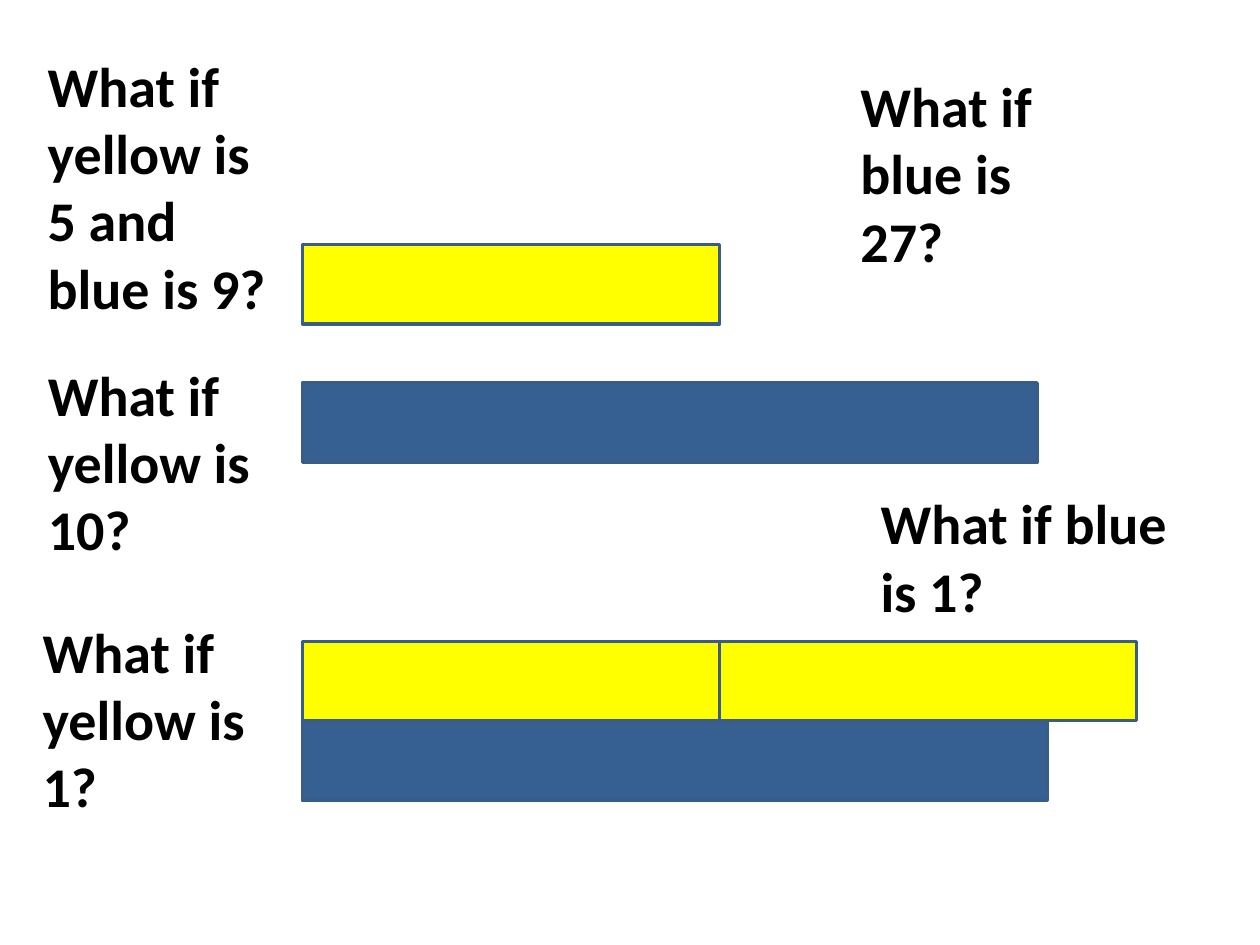
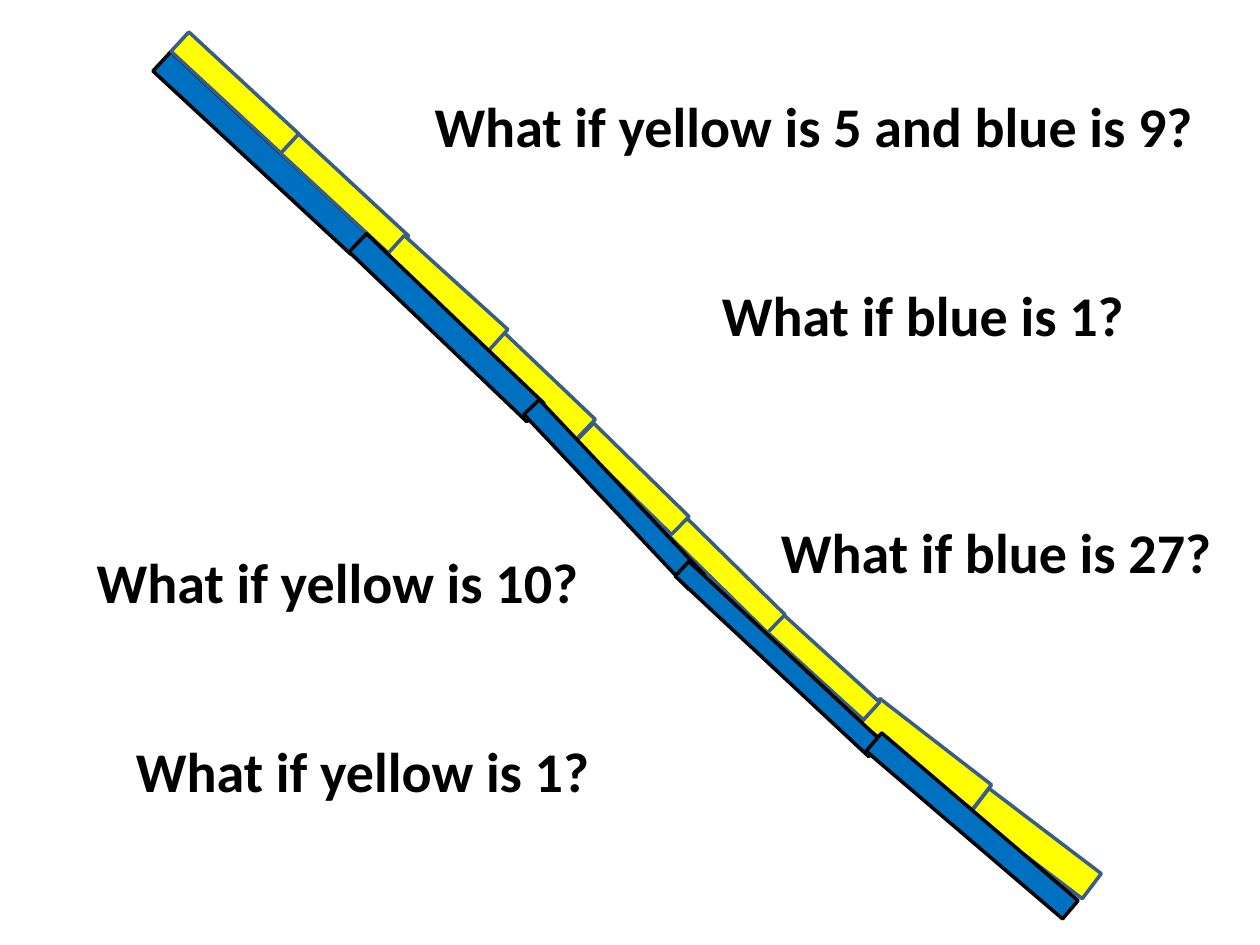
from dataclasses import dataclass

from pptx import Presentation
from pptx.dml.color import RGBColor
from pptx.enum.shapes import MSO_SHAPE
from pptx.enum.text import MSO_AUTO_SIZE
from pptx.util import Pt

RECTANGLE = MSO_SHAPE.RECTANGLE
GROW_TO_TEXT = MSO_AUTO_SIZE.SHAPE_TO_FIT_TEXT
BLANK_LAYOUT = 6


@dataclass(frozen=True)
class Rod:
    fill: RGBColor
    line: RGBColor


@dataclass(frozen=True)
class Theme:
    font: str = "Calibri"
    question_size: float = 32
    outline_width: float = 2
    text: RGBColor = RGBColor(0x00, 0x00, 0x00)
    yellow: Rod = Rod(RGBColor(0xFF, 0xFF, 0x00), RGBColor(0x38, 0x5D, 0x8A))
    navy: Rod = Rod(RGBColor(0x37, 0x60, 0x92), RGBColor(0x38, 0x5D, 0x8A))
    blue: Rod = Rod(RGBColor(0x00, 0x70, 0xC0), RGBColor(0x00, 0x00, 0x00))


THEME = Theme()

YELLOW_AND_BLUE = "What if yellow is 5 and blue is 9?"
YELLOW_TEN = "What if yellow is 10?"
YELLOW_ONE = "What if yellow is 1?"
BLUE_TWENTY_SEVEN = "What if blue is 27?"
BLUE_ONE = "What if blue is 1?"

# Each question: text, (left, top, width, height)
COMPARISON_QUESTIONS = [
    (YELLOW_AND_BLUE, (20.2, 25.9, 141.8, 162.7)),
    (YELLOW_TEN, (20.2, 202.3, 130.3, 123.8)),
    (BLUE_TWENTY_SEVEN, (484.6, 37.4, 130.3, 123.8)),
    (YELLOW_ONE, (17.3, 349.2, 156.2, 123.8)),
    (BLUE_ONE, (496.1, 275.8, 187.2, 85)),
]
TRAIN_QUESTIONS = [
    (YELLOW_AND_BLUE, (241.2, 49, 452.9, 46.1)),
    (YELLOW_TEN, (48.2, 309.6, 293, 46.1)),
    (BLUE_TWENTY_SEVEN, (439.2, 292.3, 263.5, 46.1)),
    (YELLOW_ONE, (70.6, 417.6, 277.2, 46.1)),
    (BLUE_ONE, (405.4, 157, 247, 46.1)),
]

# Each rod of the trains: (left, top, width, height), rotation
FIRST_BLUE = ((72, 79.9, 154.1, 15.1), 42.8)
FIRST_YELLOWS = [
    ((91.4, 45.4, 85.7, 15.1), 42.8),
    ((154.1, 103.7, 85.7, 15.1), 42.8),
]
YELLOW_TRAIN = [
    ((551.5, 473, 80.6, 18), 217.2),
    ((488.9, 421.9, 80.6, 18), 217.7),
    ((429.8, 373, 78.5, 13.7), 222.3),
    ((371.5, 319.7, 84.2, 14.4), 224.5),
    ((323.3, 266.4, 76.3, 14.4), 224.4),
    ((261.4, 208.1, 84.2, 18), 223.6),
    ((214.6, 159.1, 79.9, 18), 222.2),
]
BLUE_TRAIN = [
    ((185, 180, 140.4, 14.4), 223.7),
    ((282.2, 276.5, 137.5, 12.2), 226.7),
    ((369.4, 370.8, 151.2, 11.5), 223),
    ((481.7, 465.1, 147.6, 13.7), 40.5),
]


def add_rod(shapes, rod, box, rotation=0):
    shape = shapes.add_shape(RECTANGLE, *map(Pt, box))
    shape.rotation = rotation
    shape.shadow.inherit = False
    shape.fill.solid()
    shape.fill.fore_color.rgb = rod.fill
    shape.line.color.rgb = rod.line
    shape.line.width = Pt(THEME.outline_width)


def add_train(shapes, rod, places):
    for box, rotation in places:
        add_rod(shapes, rod, box, rotation)


def add_questions(slide, questions, wrap):
    for text, box in questions:
        frame = slide.shapes.add_textbox(*map(Pt, box)).text_frame
        frame.word_wrap = wrap
        frame.auto_size = GROW_TO_TEXT
        paragraph = frame.paragraphs[0]
        paragraph.text = text
        font = paragraph.font
        font.name = THEME.font
        font.size = Pt(THEME.question_size)
        font.bold = True
        font.color.rgb = THEME.text


def add_separate_rods(slide, box, yellow_width):
    """Yellow along the top of the box, blue along its bottom."""
    left, top, width, height = box
    rod_height = 45.4
    blue_top = top + height - rod_height
    add_rod(slide.shapes, THEME.navy, (left, blue_top, width, rod_height))
    add_rod(slide.shapes, THEME.yellow, (left, top, yellow_width, rod_height))


def add_stacked_rods(slide, box, blue_width):
    """Two equal yellow rods across the box, one blue rod beneath."""
    left, top, width, height = box
    yellow_width, rod_height = width / 2, height / 2
    shapes = slide.shapes.add_group_shape().shapes
    add_rod(shapes, THEME.navy,
            (left, top + rod_height, blue_width, rod_height))
    for index in range(2):
        add_rod(shapes, THEME.yellow,
                (left + index * yellow_width, top, yellow_width, rod_height))


def build_comparison_slide(slide):
    add_separate_rods(slide, (172.8, 139.7, 419.8, 124.6), yellow_width=238.3)
    add_stacked_rods(slide, (172.8, 366.5, 476.6, 90.8), blue_width=425.5)
    add_questions(slide, COMPARISON_QUESTIONS, wrap=True)


def build_train_slide(slide):
    first_rods = slide.shapes.add_group_shape().shapes
    add_train(first_rods, THEME.blue, [FIRST_BLUE])
    add_train(first_rods, THEME.yellow, FIRST_YELLOWS)
    add_train(slide.shapes, THEME.yellow, YELLOW_TRAIN)
    add_train(slide.shapes, THEME.blue, BLUE_TRAIN)
    add_questions(slide, TRAIN_QUESTIONS, wrap=False)


def main():
    presentation = Presentation()
    presentation.slide_width = Pt(720)
    presentation.slide_height = Pt(540)
    blank = presentation.slide_layouts[BLANK_LAYOUT]
    for build in (build_comparison_slide, build_train_slide):
        build(presentation.slides.add_slide(blank))
    presentation.save("out.pptx")


if __name__ == "__main__":
    main()
